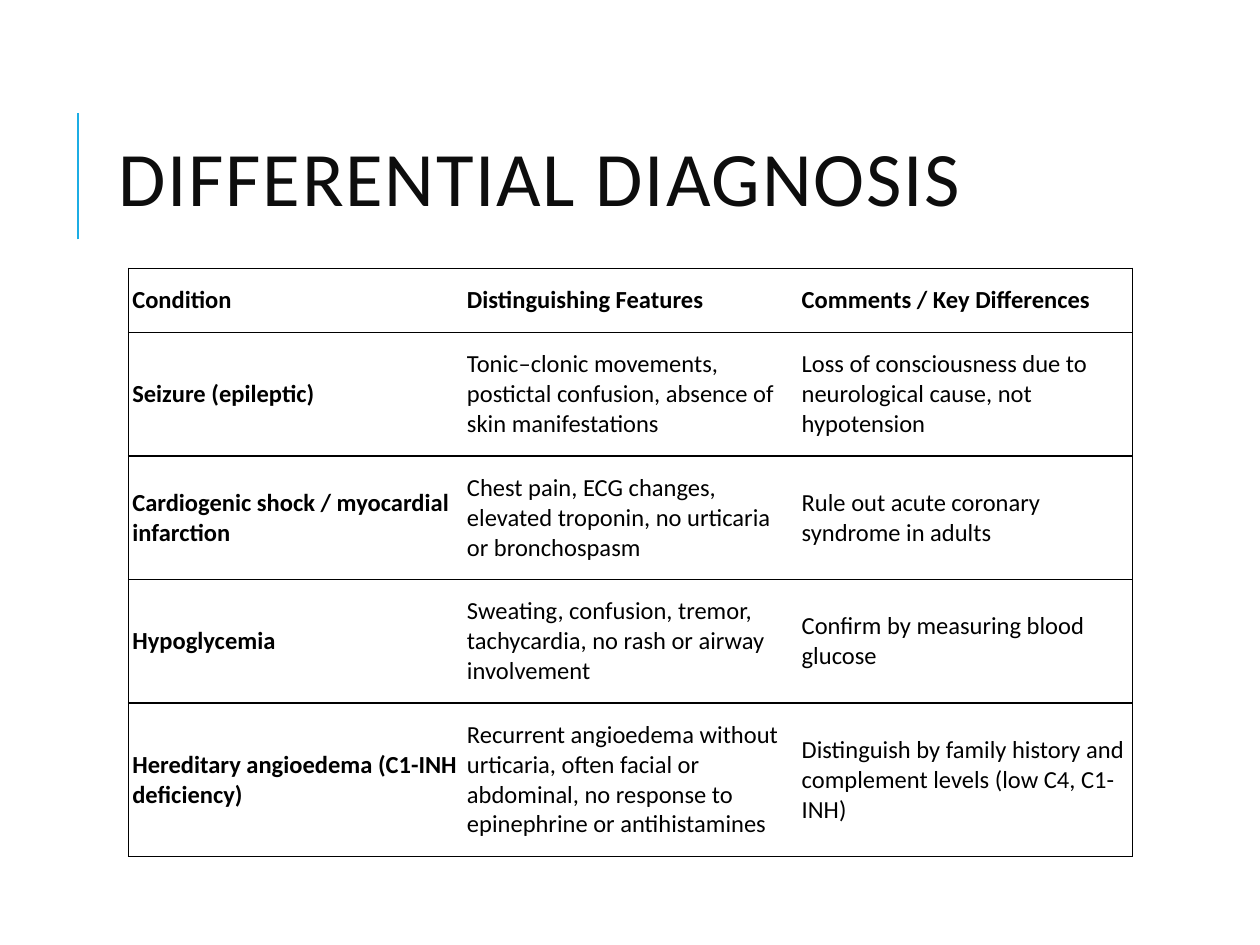
import pptx
import pptx.dml.color
import pptx.enum.shapes
import pptx.enum.text
import pptx.oxml
import pptx.oxml.ns
import pptx.util

WIDTH, HEIGHT = 10, 7.5
ROW_HEIGHTS = [0.51, 0.98, 0.98, 0.98, 1.22]
ROWS = [
    ["Condition", "Distinguishing Features", "Comments / Key Differences"],
    ["Seizure (epileptic)",
     "Tonic–clonic movements, postictal confusion, absence of skin manifestations",
     "Loss of consciousness due to neurological cause, not hypotension"],
    ["Cardiogenic shock / myocardial infarction",
     "Chest pain, ECG changes, elevated troponin, no urticaria or bronchospasm",
     "Rule out acute coronary syndrome in adults"],
    ["Hypoglycemia",
     "Sweating, confusion, tremor, tachycardia, no rash or airway involvement",
     "Confirm by measuring blood glucose"],
    ["Hereditary angioedema (C1-INH deficiency)",
     "Recurrent angioedema without urticaria, often facial or abdominal, "
     "no response to epinephrine or antihistamines",
     "Distinguish by family history and complement levels (low C4, C1-INH)"],
]


def rgb(value):
    return pptx.dml.color.RGBColor.from_string(value)


def write(tf, text, size, color, font="Calibri", bold=False, spacing=1, tracking=0):
    p = tf.paragraphs[0]
    p.alignment = pptx.enum.text.PP_ALIGN.LEFT
    p.line_spacing = spacing
    r = p.add_run()
    r.text = text
    r.font.name = font
    r.font.size = pptx.util.Pt(size)
    r.font.bold = bold
    r.font.color.rgb = rgb(color)
    if tracking:
        r.font._element.set("spc", str(tracking * 100))


class Deck:
    accent, ink, title_ink, paper = "1CADE4", "000000", "0D0D0D", "FFFFFF"

    def __init__(self):
        self.prs = pptx.Presentation()
        self.prs.slide_width = pptx.util.Inches(WIDTH)
        self.prs.slide_height = pptx.util.Inches(HEIGHT)
        self.s = self.prs.slides.add_slide(self.prs.slide_layouts[5])
        self.s.background.fill.solid()
        self.s.background.fill.fore_color.rgb = rgb(self.paper)

    def x(self, share):
        return int(self.prs.slide_width * share)

    def y(self, share):
        return int(self.prs.slide_height * share)

    def rule(self, x1, y1, x2, y2):
        line = self.s.shapes.add_connector(
            pptx.enum.shapes.MSO_CONNECTOR.STRAIGHT,
            self.x(x1), self.y(y1), self.x(x2), self.y(y2))
        line.line.color.rgb = rgb(self.accent)
        line.line.width = pptx.util.Pt(1.5)
        line._element.spPr.append(pptx.oxml.parse_xml(
            f'<a:effectLst {pptx.oxml.ns.nsdecls("a")}/>'))

    def title(self, text, x, y, w, h):
        sp = self.s.shapes.title
        sp.left, sp.top, sp.width, sp.height = self.x(x), self.y(y), self.x(w), self.y(h)
        tf = sp.text_frame
        tf.word_wrap = True
        tf.auto_size = pptx.enum.text.MSO_AUTO_SIZE.NONE
        tf.vertical_anchor = pptx.enum.text.MSO_ANCHOR.MIDDLE
        write(tf, text, 44, self.title_ink, spacing=0.8, tracking=1)

    def borders(self, cell, sides):
        tcPr = cell._tc.get_or_add_tcPr()
        for side in "LRTB":
            paint = (f'<a:solidFill><a:srgbClr val="{self.ink}"/></a:solidFill>'
                     if side in sides else "<a:noFill/>")
            tcPr.append(pptx.oxml.parse_xml(
                f'<a:ln{side} {pptx.oxml.ns.nsdecls("a")} w="12700">{paint}</a:ln{side}>'))

    def cell(self, cell, text, sides, bold):
        self.borders(cell, sides)
        cell.fill.solid()
        cell.fill.fore_color.rgb = rgb(self.paper)
        cell.margin_left = cell.margin_right = pptx.util.Inches(0.03)
        cell.margin_top = cell.margin_bottom = pptx.util.Inches(0.02)
        cell.vertical_anchor = pptx.enum.text.MSO_ANCHOR.MIDDLE
        write(cell.text_frame, text, 14, self.ink, bold=bold)

    def table(self, rows, heights, x, y, w):
        last = len(rows[0]) - 1
        table = self.s.shapes.add_table(
            len(rows), len(rows[0]), self.x(x), self.y(y), self.x(w),
            pptx.util.Inches(sum(heights))).table
        table.first_row = table.horz_banding = False
        for i, (values, height) in enumerate(zip(rows, heights)):
            table.rows[i].height = pptx.util.Inches(height)
            for j, text in enumerate(values):
                sides = "TB" + "L" * (j == 0) + "R" * (j == last)
                self.cell(table.cell(i, j), text, sides, bold=i == 0 or j == 0)


def main():
    deck = Deck()
    deck.rule(0.062, 1.9 / HEIGHT, 0.062, 0.9 / HEIGHT)
    deck.title("DIFFERENTIAL DIAGNOSIS", 0.084, 0.64 / HEIGHT, 0.797, 1.64 / HEIGHT)
    deck.table(ROWS, ROW_HEIGHTS, 0.102, 2.13 / HEIGHT, 0.797)
    deck.prs.save("out.pptx")


if __name__ == "__main__":
    main()
